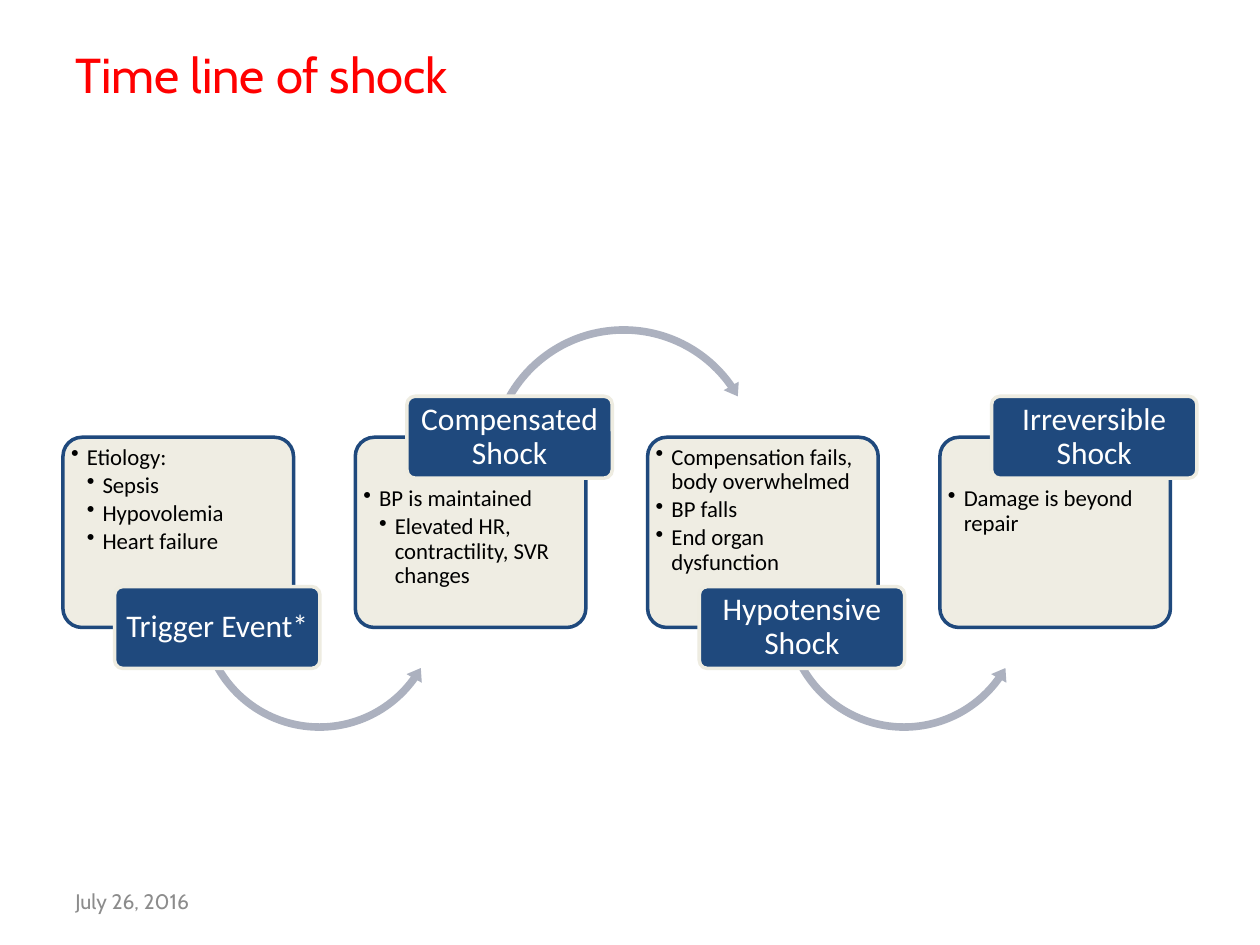
"""Build the time line of shock slide."""
from dataclasses import dataclass

import pptx
import pptx.dml.color
import pptx.enum.shapes
import pptx.enum.text
import pptx.oxml.ns
import pptx.util
from lxml import etree
from pptx.util import Inches

RGBColor = pptx.dml.color.RGBColor
SHAPE = pptx.enum.shapes.MSO_SHAPE
ANCHOR = pptx.enum.text.MSO_ANCHOR
ALIGN = pptx.enum.text.PP_ALIGN
qn = pptx.oxml.ns.qn

RED = RGBColor(0xFF, 0x00, 0x00)
GREY = RGBColor(0x8C, 0x8C, 0x8C)
BLACK = RGBColor(0x00, 0x00, 0x00)
WHITE = RGBColor(0xFF, 0xFF, 0xFF)
NAVY = RGBColor(0x1F, 0x49, 0x7D)
CREAM = RGBColor(0xEE, 0xEC, 0xE1)
ARROW = RGBColor(0xAC, 0xB1, 0xBF)

LEFT, PITCH = 0.5, 2.32
CARD_TOP, CARD_W, CARD_H = 3.47, 1.83, 1.51
LABEL_DX, LABEL_W, LABEL_H = 0.41, 1.63, 0.65


@dataclass
class Step:
    label: str
    bullets: list[tuple[int, str]]
    label_on_top: bool


@dataclass
class Arc:
    kind: int
    dx: float
    top: float
    size: float
    adjustments: tuple[float, ...]


STEPS = [
    Step("Trigger Event*", [(0, "Etiology:"), (1, "Sepsis"), (1, "Hypovolemia"), (1, "Heart failure")], False),
    Step("Compensated Shock", [(0, "BP is maintained"), (1, "Elevated HR, contractility, SVR changes")], True),
    Step("Hypotensive Shock", [(0, "Compensation fails, body overwhelmed"), (0, "BP falls"),
                               (0, "End organ dysfunction")], False),
    Step("Irreversible Shock", [(0, "Damage is beyond repair")], True),
]
LOWER_ARC = Arc(SHAPE.LEFT_CIRCULAR_ARROW, 1.04, 3.85, 1.99, (0.03, 3.637, 21.392, 90.245, 0.035))
UPPER_ARC = Arc(SHAPE.CIRCULAR_ARROW, 1.02, 2.55, 2.22, (0.027, 3.23, 195.015, 125.755, 0.031))


def write(tf, paragraphs, *, size, color, font="Calibri", align=ALIGN.LEFT, anchor=ANCHOR.TOP,
          insets=(0.1, 0.05, 0.1, 0.05), spacing=1.0, after=0, bullets=False) -> None:
    tf.word_wrap = True
    tf.auto_size = pptx.enum.text.MSO_AUTO_SIZE.NONE
    tf.vertical_anchor = anchor
    tf.margin_left, tf.margin_top, tf.margin_right, tf.margin_bottom = map(Inches, insets)
    for i, (level, text) in enumerate(paragraphs):
        p = tf.add_paragraph() if i else tf.paragraphs[0]
        p.alignment, p.level, p.line_spacing = align, level, spacing
        p.space_before, p.space_after = pptx.util.Pt(0), pptx.util.Pt(after)
        if bullets:
            pPr = p._p.get_or_add_pPr()
            pPr.set("marL", str(Inches(0.125 * (level + 1))))
            pPr.set("indent", str(-Inches(0.125)))
            etree.SubElement(pPr, qn("a:buChar")).set("char", "•")
        r = p.add_run()
        r.text = text
        r.font.name, r.font.size = font, pptx.util.Pt(size)
        r.font.color.rgb = color


def add_shape(s, kind, x: float, y: float, w: float, h: float, fill: RGBColor,
              adjustments: tuple[float, ...], line: RGBColor | None = None):
    sp = s.shapes.add_shape(kind, Inches(x), Inches(y), Inches(w), Inches(h))
    sp.shadow.inherit = False
    sp.fill.solid()
    sp.fill.fore_color.rgb = fill
    for i, value in enumerate(adjustments):
        sp.adjustments[i] = value
    if line is None:
        sp.line.fill.background()
    else:
        sp.line.color.rgb = line
        sp.line.width = pptx.util.Pt(2)
    return sp


def add_step(s, step: Step, x: float, arc: Arc | None) -> None:
    card = add_shape(s, SHAPE.ROUNDED_RECTANGLE, x, CARD_TOP, CARD_W, CARD_H, CREAM, (0.1,), NAVY)
    color = card.fill._xPr.find(qn("a:solidFill"))[0]
    etree.SubElement(color, qn("a:alpha")).set("val", "90000")
    top, bottom = (0.35, 0.02) if step.label_on_top else (0.02, 0.35)
    write(card.text_frame, step.bullets, size=13, color=BLACK, insets=(0.02, top, 0.02, bottom),
          spacing=0.9, after=2, bullets=True)
    if arc:
        add_shape(s, arc.kind, x + arc.dx, arc.top, arc.size, arc.size, ARROW, arc.adjustments)
    edge = CARD_TOP if step.label_on_top else CARD_TOP + CARD_H
    label = add_shape(s, SHAPE.ROUNDED_RECTANGLE, x + LABEL_DX, edge - LABEL_H / 2, LABEL_W, LABEL_H,
                      NAVY, (0.1,), CREAM)
    write(label.text_frame, [(0, step.label)], size=18, color=WHITE, align=ALIGN.CENTER,
          anchor=ANCHOR.MIDDLE, insets=(0.04, 0.03, 0.04, 0.03), spacing=0.9)


def main() -> None:
    prs = pptx.Presentation()
    prs.slide_width, prs.slide_height = Inches(10), Inches(7.5)
    s = prs.slides.add_slide(prs.slide_layouts[5])
    title = s.shapes.title
    title.left, title.top, title.width, title.height = map(Inches, (0.5, 0.3, 9, 1.25))
    write(title.text_frame, [(0, "Time line of shock")], size=28, color=RED, font="Cabin")
    date = s.shapes.add_textbox(*map(Inches, (0.5, 6.95, 2.33, 0.4)))
    write(date.text_frame, [(0, "July 26, 2016")], size=12, color=GREY, font="Cabin", anchor=ANCHOR.MIDDLE)
    for i, step in enumerate(STEPS):
        arc = UPPER_ARC if step.label_on_top else LOWER_ARC
        add_step(s, step, LEFT + i * PITCH, arc if i < len(STEPS) - 1 else None)
    prs.save("out.pptx")


if __name__ == "__main__":
    main()
